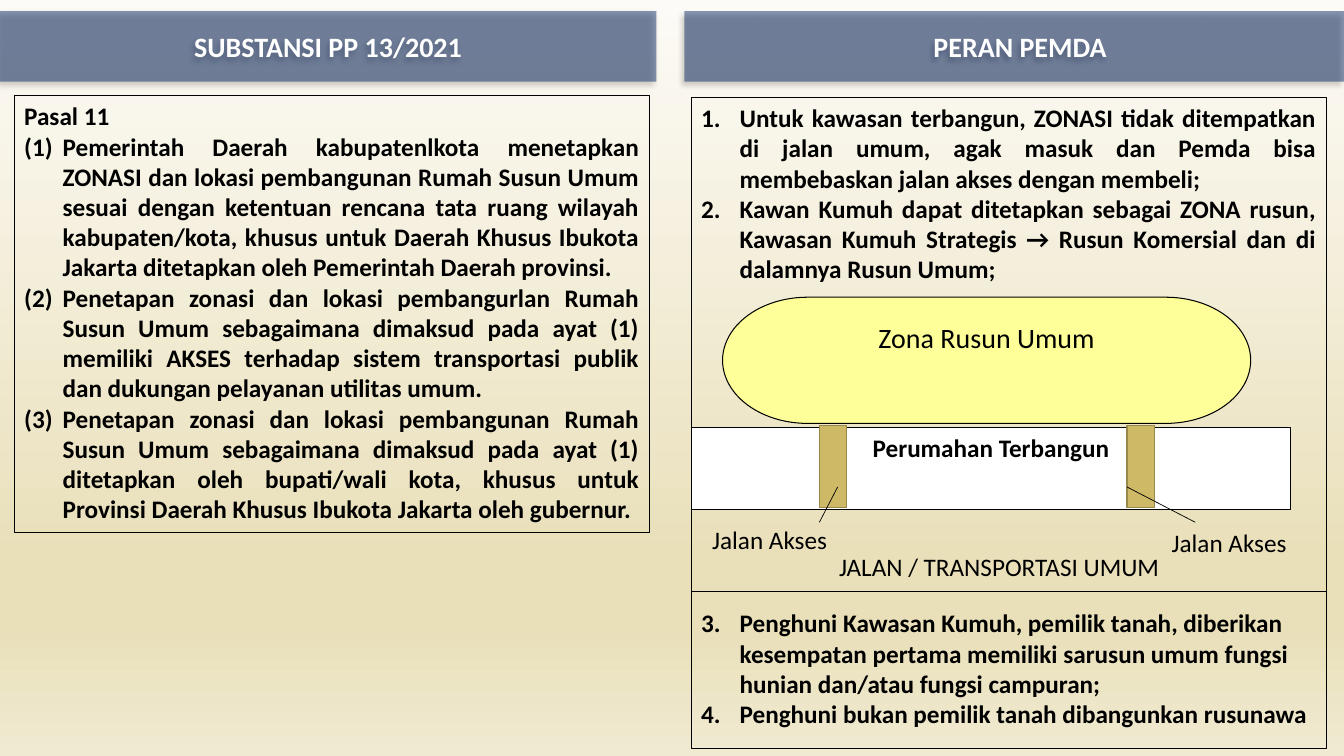
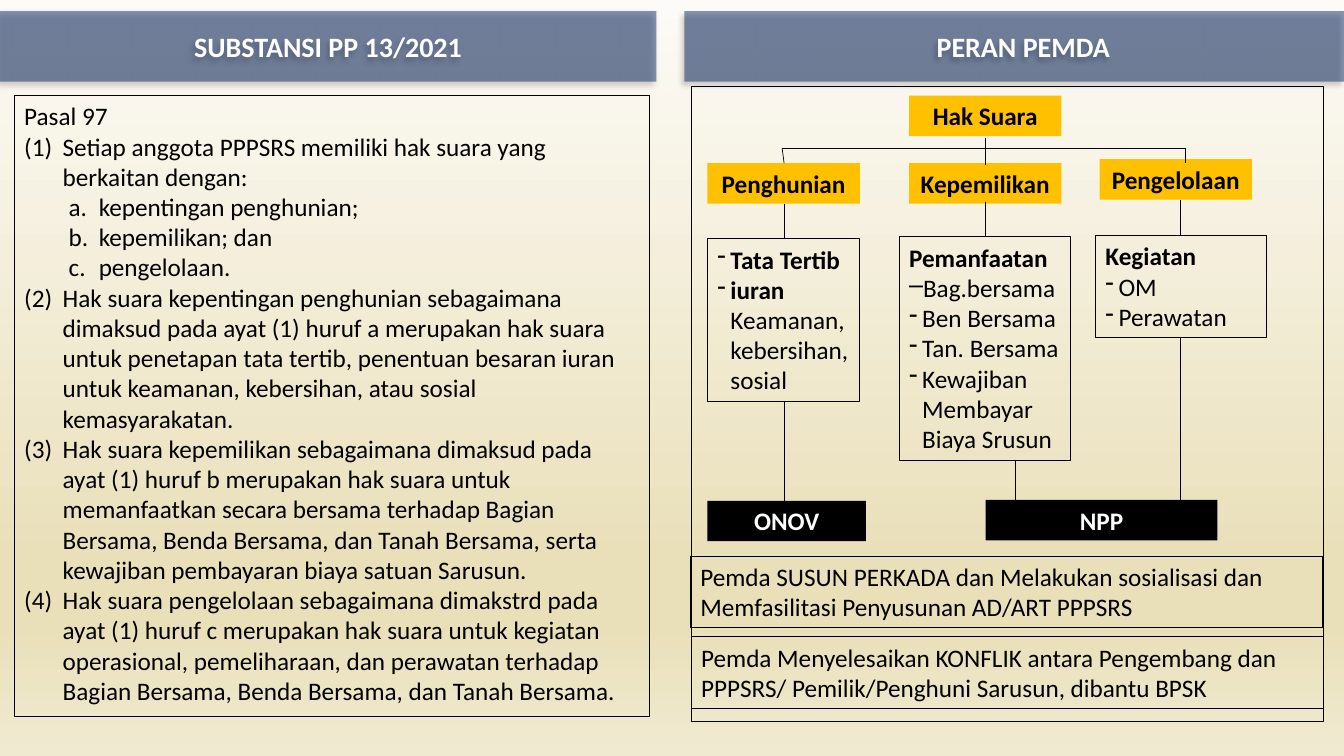
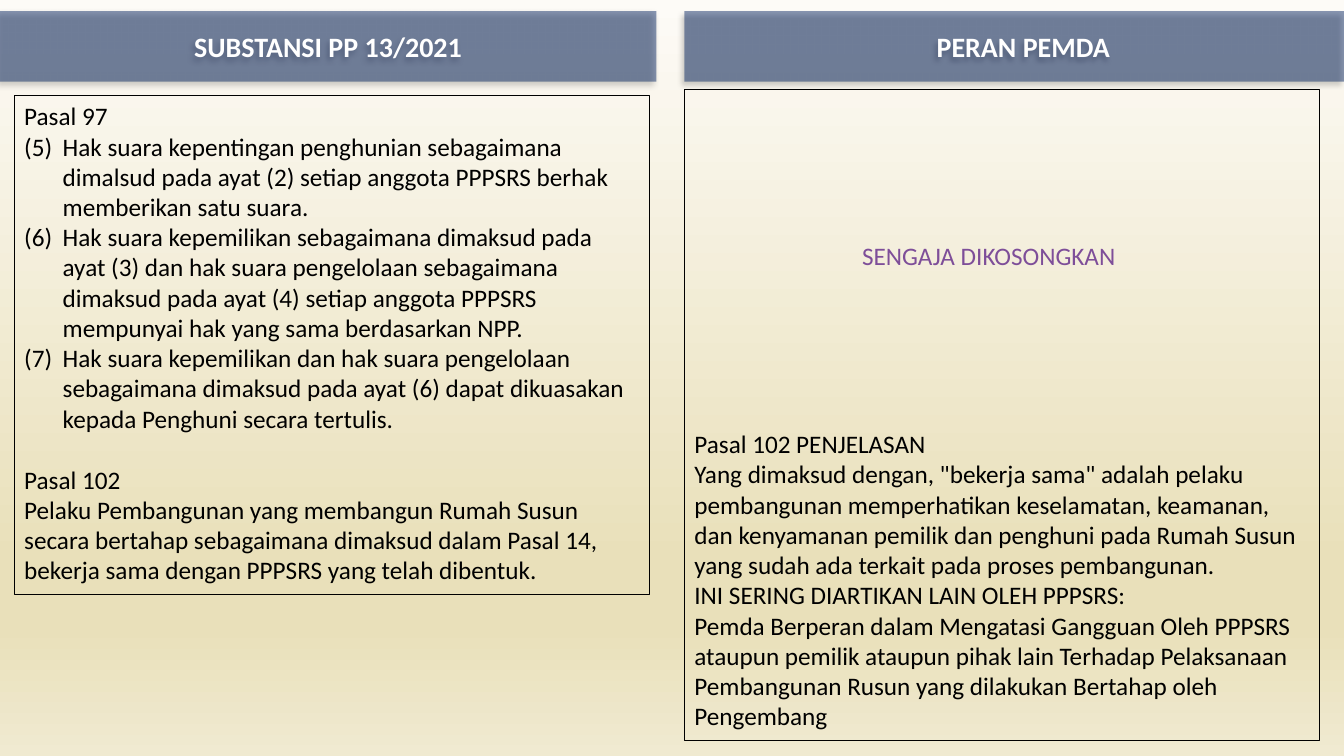
from dataclasses import dataclass
from lxml import etree
from pptx import Presentation
from pptx import util as u
from pptx.dml import color
from pptx.enum import shapes, text
from pptx.oxml import ns

FONT = "Calibri"
BLACK, WHITE, NAVY = "000000", "FFFFFF", "002060"
GOLD, SAND, SAND_EDGE, YELLOW, PURPLE = "FFC000", "CEB966", "98894B", "FFFF99", "7E4E99"
BACKDROP = [(0, "FDFBF7"), (74, "E9E0BA"), (83, "E9E0BA"), (100, "F0EAD1")]
LEFT, CENTER, JUSTIFY = text.PP_ALIGN.LEFT, text.PP_ALIGN.CENTER, text.PP_ALIGN.JUSTIFY
TOP, MIDDLE, BOTTOM = text.MSO_ANCHOR.TOP, text.MSO_ANCHOR.MIDDLE, text.MSO_ANCHOR.BOTTOM
RECT = shapes.MSO_SHAPE.RECTANGLE
CLAUSE, ORDINAL, LETTER = "arabicParenBoth", "arabicPeriod", "alphaLcPeriod"
INDENTS = {CLAUSE: (0.97, -0.97), ORDINAL: (0.97, -0.97), LETTER: (1.88, -0.76)}
DASH_INDENT = (0.33, -0.33)


@dataclass
class Para:
    text: str
    mark: str = ""
    start: int = 1
    bold: bool = False
    align: object = LEFT
    size: int = 18
    color: str = BLACK
    before: int = 0
    tail: str = ""


def rgb(value):
    return color.RGBColor.from_string(value)


def child(parent, tag, **attrs):
    return etree.SubElement(parent, ns.qn(tag), {k: str(v) for k, v in attrs.items()})


def numbered(lines, mark=CLAUSE, start=1, **style):
    return [Para(line, mark, start, **style) for line in lines]


class Deck:
    def __init__(self):
        self.prs = Presentation()
        self.prs.slide_width, self.prs.slide_height = u.Cm(33.87), u.Cm(19.05)
        self.s = None
        fill = self.prs.slide_master.background.fill
        fill.gradient()
        fill.gradient_angle = 270
        stops = next(self.prs.slide_master.element.iter(ns.qn("a:gsLst")))
        stops.clear()
        for pos, value in BACKDROP:
            child(child(stops, "a:gs", pos=pos * 1000), "a:srgbClr", val=value)

    def new_slide(self, shift):
        self.s = self.prs.slides.add_slide(self.prs.slide_layouts[5])
        left = self.s.shapes.title
        left.left, left.top, left.width, left.height = map(u.Cm, (0, 0.28, 16.54, 1.78))
        right = self.s.shapes.add_shape(RECT, *map(u.Cm, (17.25, 0.28, 16.62, 1.78)))
        for sp, heading in ((left, "SUBSTANSI PP 13/2021"), (right, "PERAN PEMDA")):
            self.paint(sp, NAVY, None)
            clr = next(sp.element.spPr.iter(ns.qn("a:srgbClr")))
            child(clr, "a:alpha", val=46000)
            effects = sp.element.spPr.find(ns.qn("a:effectLst"))
            shadow = child(effects, "a:outerShdw", blurRad=u.Pt(4), dist=u.Pt(3),
                           dir=8100000, algn="tr", rotWithShape=0)
            child(child(shadow, "a:srgbClr", val=BLACK), "a:alpha", val=40000)
            self.put_text(sp, [Para(heading, bold=True, align=CENTER, size=20, color=WHITE)], MIDDLE)
        right.text_frame.margin_left = u.Cm(0.25 + shift)

    def paint(self, sp, fill, line, weight=0.75):
        sp.shadow.inherit = False
        if fill:
            sp.fill.solid()
            sp.fill.fore_color.rgb = rgb(fill)
        else:
            sp.fill.background()
        if line:
            sp.line.color.rgb = rgb(line)
            sp.line.width = u.Pt(weight)
        else:
            sp.line.fill.background()

    def put_text(self, sp, paras, anchor=TOP, wrap=True):
        tf = sp.text_frame
        tf.word_wrap = wrap
        tf.vertical_anchor = anchor
        for i, para in enumerate(paras):
            p = tf.add_paragraph() if i else tf.paragraphs[0]
            p.alignment = para.align
            if para.before:
                p.space_before = u.Pt(para.before)
            if para.mark:
                self.bullet(p, para)
            p.font.name, p.font.size, p.font.bold = FONT, u.Pt(para.size), para.bold
            p.font.color.rgb = rgb(para.color)
            p.add_run().text = para.text
            if para.tail:
                r = p.add_run()
                r.text = para.tail
                r.font.bold = False

    def bullet(self, p, para):
        pPr = p._p.get_or_add_pPr()
        margin, indent = INDENTS.get(para.mark, DASH_INDENT)
        pPr.set("marL", str(u.Cm(margin)))
        pPr.set("indent", str(u.Cm(indent)))
        if para.mark in INDENTS:
            child(pPr, "a:buAutoNum", type=para.mark, startAt=para.start)
        else:
            child(pPr, "a:buChar", char=para.mark)

    def box(self, x, y, w, h, paras=(), fill=None, line=BLACK, weight=0.75, kind=RECT, anchor=TOP):
        sp = self.s.shapes.add_shape(kind, *map(u.Cm, (x, y, w, h)))
        self.paint(sp, fill, line, weight)
        self.put_text(sp, paras, anchor)
        return sp

    def tag(self, x, y, w, caption, fill=GOLD, ink=BLACK):
        self.box(x, y, w, 1.02, [Para(caption, bold=True, align=CENTER, color=ink)], fill, None)

    def label(self, x, y, w, h, paras, wrap=True):
        sp = self.s.shapes.add_textbox(*map(u.Cm, (x, y, w, h)))
        self.put_text(sp, paras, wrap=wrap)

    def line(self, x1, y1, x2, y2):
        cn = self.s.shapes.add_connector(shapes.MSO_CONNECTOR.STRAIGHT, *map(u.Cm, (x1, y1, x2, y2)))
        cn.line.color.rgb = rgb(BLACK)
        cn.line.width = u.Pt(0.5)
        child(cn.element.spPr, "a:effectLst")

    def article(self, h, paras):
        self.box(0.36, 2.41, 16, h, paras)


def zoning(d):
    d.new_slide(0.3)
    d.article(11.02, [Para("Pasal 11", bold=True)] + numbered([
        "Pemerintah Daerah kabupatenlkota menetapkan ZONASI dan lokasi pembangunan Rumah Susun Umum "
        "sesuai dengan ketentuan rencana tata ruang wilayah kabupaten/kota, khusus untuk Daerah Khusus "
        "Ibukota Jakarta ditetapkan oleh Pemerintah Daerah provinsi.",
        "Penetapan zonasi dan lokasi pembangurlan Rumah Susun Umum sebagaimana dimaksud pada ayat (1) "
        "memiliki AKSES terhadap sistem transportasi publik dan dukungan pelayanan utilitas umum.",
        "Penetapan zonasi dan lokasi pembangunan Rumah Susun Umum sebagaimana dimaksud pada ayat (1) "
        "ditetapkan oleh bupati/wali kota, khusus untuk Provinsi Daerah Khusus Ibukota Jakarta oleh "
        "gubernur."], bold=True, align=JUSTIFY))
    d.box(17.42, 2.46, 16, 16.41, numbered([
        "Untuk kawasan terbangun, ZONASI tidak ditempatkan di jalan umum, agak masuk dan Pemda bisa "
        "membebaskan jalan akses dengan membeli;",
        "Kawan Kumuh dapat ditetapkan sebagai ZONA rusun, Kawasan Kumuh Strategis → Rusun Komersial "
        "dan di dalamnya Rusun Umum;"], ORDINAL, bold=True, align=JUSTIFY))
    d.box(18.21, 7.49, 13.31, 3.18, [Para("Zona Rusun Umum", align=CENTER, size=20)], YELLOW,
          kind=shapes.MSO_SHAPE.FLOWCHART_TERMINATOR)
    d.box(17.42, 10.77, 15.11, 2.06, [Para("Perumahan Terbangun", bold=True, align=CENTER)], WHITE)
    for x in (20.65, 28.4):
        d.box(x, 10.73, 0.69, 2.06, fill=SAND, line=SAND_EDGE, weight=1)
    d.line(17.42, 14.91, 33.42, 14.91)
    for x, y, w, caption in ((20.85, 13.77, 8.66, "JALAN / TRANSPORTASI UMUM"),
                             (29.26, 13.16, 3.43, "Jalan Akses"),
                             (17.68, 13.08, 3.43, "Jalan Akses")):
        d.label(x, y, w, 1.02, [Para(caption, align=CENTER)], wrap=False)
    d.line(20.65, 13.16, 21.11, 12.27)
    d.line(28.4, 12.27, 30.12, 13.16)
    d.label(17.42, 15.19, 16, 3.33, numbered([
        "Penghuni Kawasan Kumuh, pemilik tanah, diberikan kesempatan pertama memiliki sarusun umum "
        "fungsi hunian dan/atau fungsi campuran;",
        "Penghuni bukan pemilik tanah dibangunkan rusunawa"], ORDINAL, 3, bold=True))


def voting(d):
    d.new_slide(0.46)
    d.article(15.65, [
        Para("Pasal 97"),
        *numbered(["Setiap anggota PPPSRS memiliki hak suara yang berkaitan dengan:"]),
        *numbered(["kepentingan penghunian;", "kepemilikan; dan", "pengelolaan."], LETTER),
        *numbered([
            "Hak suara kepentingan penghunian sebagaimana dimaksud pada ayat (1) huruf a merupakan hak "
            "suara untuk penetapan tata tertib, penentuan besaran iuran untuk keamanan, kebersihan, "
            "atau sosial kemasyarakatan.",
            "Hak suara kepemilikan sebagaimana dimaksud pada ayat (1) huruf b merupakan hak suara untuk "
            "memanfaatkan secara bersama terhadap Bagian Bersama, Benda Bersama, dan Tanah Bersama, "
            "serta kewajiban pembayaran biaya satuan Sarusun.",
            "Hak suara pengelolaan sebagaimana dimakstrd pada ayat (1) huruf c merupakan hak suara untuk "
            "kegiatan operasional, pemeliharaan, dan perawatan terhadap Bagian Bersama, Benda Bersama, "
            "dan Tanah Bersama."], start=2)])
    for x, y, caption in ((22.91, 2.41, "Hak Suara"), (17.83, 4.11, "Penghunian"),
                          (22.91, 4.11, "Kepemilikan"), (27.71, 4.01, "Pengelolaan")):
        d.tag(x, y, 3.84, caption)
    d.box(17.83, 6.02, 3.84, 4.11, [
        Para("Tata Tertib", "-", bold=True),
        Para("iuran ", "-", bold=True, tail="Keamanan, kebersihan, sosial")])
    d.box(22.66, 5.97, 4.32, 5.64, [
        Para("Pemanfaatan", bold=True), Para("Bag.bersama", "–"),
        *numbered(["Ben Bersama", "Tan. Bersama", "Kewajiban Membayar Biaya Srusun"], "-")])
    d.box(27.61, 5.94, 4.32, 2.57,
          [Para("Kegiatan", bold=True)] + numbered(["OM", "Perawatan"], "-"))
    d.box(17.42, 2.18, 15.93, 16, weight=1)
    d.tag(24.84, 12.6, 5.84, "NPP", BLACK, WHITE)
    d.tag(17.83, 12.62, 3.99, "ONOV", BLACK, WHITE)
    d.line(19.71, 3.73, 29.87, 3.73)
    d.line(19.71, 3.73, 19.76, 4.11)
    for x, y1, y2 in ((24.84, 3.48, 4.17), (29.87, 3.73, 4.11),
                      (19.76, 5.13, 6.02), (24.84, 5.08, 5.94), (29.74, 5.05, 5.92),
                      (19.76, 10.11, 12.62), (25.6, 11.61, 12.6), (29.74, 8.51, 12.62)):
        d.line(x, y1, x, y2)
    for x, y, duty in (
            (17.4, 14.02, "Pemda SUSUN PERKADA dan Melakukan sosialisasi dan Memfasilitasi Penyusunan "
                          "AD/ART PPPSRS"),
            (17.42, 16.05, "Pemda Menyelesaikan KONFLIK antara Pengembang dan PPPSRS/ "
                           "Pemilik/Penghuni Sarusun, dibantu BPSK")):
        d.box(x, y, 15.93, 1.8, [Para(duty)])


def cooperation(d):
    d.new_slide(0.46)
    d.article(12.57, [
        Para("Pasal 97"),
        *numbered([
            "Hak suara kepentingan penghunian sebagaimana dimalsud pada ayat (2) setiap anggota PPPSRS "
            "berhak memberikan satu suara.",
            "Hak suara kepemilikan sebagaimana dimaksud pada ayat (3) dan hak suara pengelolaan "
            "sebagaimana dimaksud pada ayat (4) setiap anggota PPPSRS mempunyai hak yang sama "
            "berdasarkan NPP.",
            "Hak suara kepemilikan dan hak suara pengelolaan sebagaimana dimaksud pada ayat (6) dapat "
            "dikuasakan kepada Penghuni secara tertulis."], start=5),
        Para("Pasal 102", before=22),
        Para("Pelaku Pembangunan yang membangun Rumah Susun secara bertahap sebagaimana dimaksud dalam "
             "Pasal 14, bekerja sama dengan PPPSRS yang telah dibentuk.")])
    sp = d.box(17.25, 2.26, 16, 16.41, [
        Para("Pasal 102 PENJELASAN"),
        Para("Yang dimaksud dengan, \"bekerja sama\" adalah pelaku pembangunan memperhatikan keselamatan, "
             "keamanan, dan kenyamanan pemilik dan penghuni pada Rumah Susun yang sudah ada terkait pada "
             "proses pembangunan."),
        Para("INI SERING DIARTIKAN LAIN OLEH PPPSRS:"),
        Para("Pemda Berperan dalam Mengatasi Gangguan Oleh PPPSRS ataupun pemilik ataupun pihak lain "
             "Terhadap Pelaksanaan Pembangunan Rusun yang dilakukan Bertahap oleh Pengembang")],
        anchor=BOTTOM)
    sp.text_frame.margin_bottom = u.Cm(0.25)
    d.label(18.67, 5.92, 12.5, 1.02, [Para("SENGAJA DIKOSONGKAN", align=CENTER, color=PURPLE)])


def main():
    d = Deck()
    for build in (zoning, voting, cooperation):
        build(d)
    d.prs.save("out.pptx")


if __name__ == "__main__":
    main()
